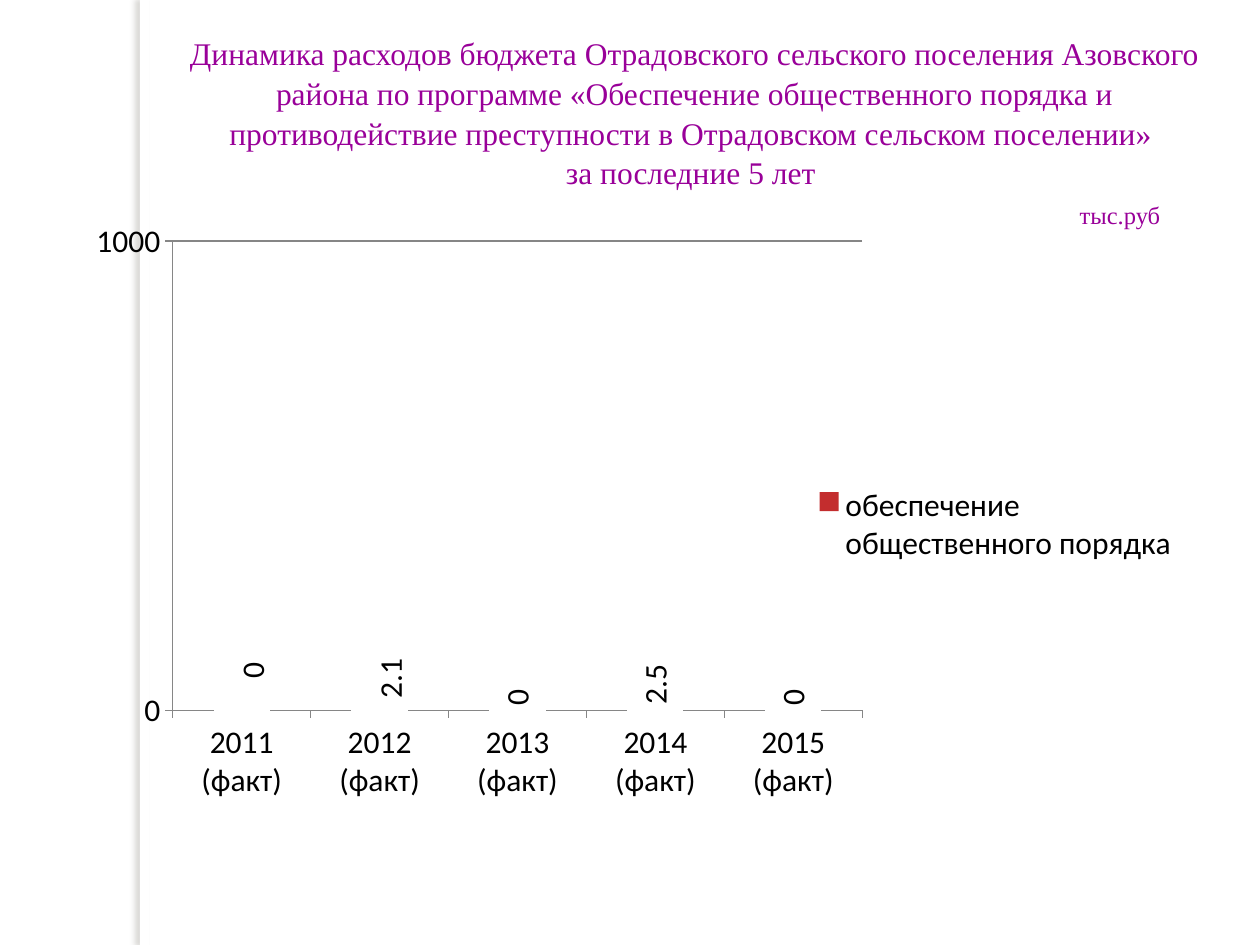
from lxml.etree import SubElement
from pptx import Presentation
from pptx.chart.data import CategoryChartData
from pptx.dml.color import RGBColor
from pptx.enum.chart import XL_CHART_TYPE, XL_LABEL_POSITION, XL_LEGEND_POSITION, XL_TICK_MARK
from pptx.enum.shapes import MSO_SHAPE
from pptx.enum.text import PP_ALIGN
from pptx.oxml import parse_xml
from pptx.oxml.ns import nsdecls, qn
from pptx.util import Cm, Pt

THEME = {
    "white": RGBColor.from_string("FFFFFF"),
    "heading": RGBColor.from_string("990099"),
    "text": RGBColor.from_string("000000"),
    "series": RGBColor.from_string("C32D2E"),
    "axis": RGBColor.from_string("868686"),
    "shadow": "736F63",
    "heading_font": "Times New Roman",
    "chart_font": "Calibri",
    "body_size": Pt(18),
    "unit_size": Pt(14),
}

HEADING = [
    ("Динамика расходов бюджета Отрадовского сельского поселения Азовского района "
     "по программе «Обеспечение общественного порядка и противодействие "
     "преступности в Отрадовском сельском поселении» ",
     "body_size", {"alignment": PP_ALIGN.CENTER, "line_spacing": 1.05}),
    ("за последние 5 лет ",
     "body_size", {"alignment": PP_ALIGN.CENTER, "line_spacing": 1.05}),
    ("тыс.руб",
     "unit_size", {"alignment": PP_ALIGN.RIGHT, "space_before": Pt(5)}),
]
UNIT_MARGIN = Cm(1.07)

SERIES_NAME = "обеспечение общественного порядка"
SPENDING = {2011: 0, 2012: 2.1, 2013: 0, 2014: 2.5, 2015: 0}
LABEL_SHIFTS = {0: (0.01, -0.045), 1: (0.01, -0.01)}
PLOT_AREA = {"x": 0.088, "y": 0.036, "w": 0.617, "h": 0.77}


def set_attrs(obj, values):
    for name, value in values.items():
        setattr(obj, name, value)


def manual_layout(modes, fractions):
    layout = parse_xml(f"<c:layout {nsdecls('c')}><c:manualLayout/></c:layout>")
    for tag, value in (modes | fractions).items():
        SubElement(layout[0], qn(f"c:{tag}")).set("val", str(value))
    return layout


def add_side_strip(slide):
    sp = slide.shapes.add_shape(MSO_SHAPE.RECTANGLE, Cm(2.82), 0, Cm(0.2), Cm(19.05))
    sp.fill.solid()
    sp.fill.fore_color.rgb = THEME["white"]
    sp.line.fill.background()
    sp._element.spPr.append(parse_xml(
        f'<a:effectLst {nsdecls("a")}><a:outerShdw blurRad="{Pt(3)}" dist="{Pt(3)}" '
        f'dir="10800000" algn="tl" rotWithShape="0"><a:srgbClr val="{THEME["shadow"]}">'
        '<a:alpha val="25000"/></a:srgbClr></a:outerShdw></a:effectLst>'))


def add_heading(slide):
    tf = slide.shapes.add_textbox(Cm(3.3), Cm(0.53), Cm(21.41), Cm(4.19)).text_frame
    tf.word_wrap = True
    for i, (text, size, layout) in enumerate(HEADING):
        p = tf.add_paragraph() if i else tf.paragraphs[0]
        set_attrs(p, layout)
        r = p.add_run()
        r.text = text
        set_attrs(r.font, {"name": THEME["heading_font"], "size": THEME[size]})
        r.font.color.rgb = THEME["heading"]
    p._p.get_or_add_pPr().set("marR", str(UNIT_MARGIN))


def add_labels(plot, series):
    plot.has_data_labels = True
    set_attrs(plot.data_labels, {"show_value": True, "position": XL_LABEL_POSITION.OUTSIDE_END})
    labels = series.data_labels
    set_attrs(labels, {"show_value": True, "position": XL_LABEL_POSITION.OUTSIDE_END})
    labels.font.size = THEME["body_size"]
    labels._element.find(qn("c:txPr")).find(qn("a:bodyPr")).set("rot", "-5400000")
    for i, (x, y) in LABEL_SHIFTS.items():
        label = series.points[i].data_label
        label.font.size = THEME["body_size"]
        label.position = XL_LABEL_POSITION.OUTSIDE_END
        d_lbl = labels._element.findall(qn("c:dLbl"))[i]
        d_lbl.find(qn("c:txPr")).find(qn("a:bodyPr")).set("rot", "-5400000")
        d_lbl.insert(1, manual_layout({}, {"x": x, "y": y}))


def add_spending_chart(slide):
    data = CategoryChartData(number_format="General")
    data.categories = [f"{year} (факт)" for year in SPENDING]
    data.add_series(SERIES_NAME, SPENDING.values())
    chart = slide.shapes.add_chart(
        XL_CHART_TYPE.COLUMN_CLUSTERED, Cm(1.5), Cm(4.42), Cm(22.53), Cm(12.29), data).chart
    set_attrs(chart, {"has_title": False, "has_legend": True})
    set_attrs(chart.font, {"name": THEME["chart_font"], "size": THEME["body_size"]})
    chart.font.color.rgb = THEME["text"]
    set_attrs(chart.legend, {"position": XL_LEGEND_POSITION.RIGHT, "include_in_layout": False})

    set_attrs(chart.value_axis, {"minimum_scale": 0, "maximum_scale": 1000,
                                 "major_unit": 1000, "has_major_gridlines": True})
    lines = [chart.value_axis.major_gridlines.format.line]
    for axis in (chart.category_axis, chart.value_axis):
        axis.major_tick_mark = XL_TICK_MARK.OUTSIDE
        lines.append(axis.format.line)
    for line in lines:
        line.color.rgb = THEME["axis"]
        line.width = Pt(0.75)

    plot = chart.plots[0]
    set_attrs(plot, {"vary_by_categories": False, "gap_width": 150})
    series = plot.series[0]
    series.invert_if_negative = False
    series.format.fill.solid()
    series.format.fill.fore_color.rgb = THEME["series"]
    for i in range(len(SPENDING)):
        fmt = series.points[i].format
        fmt.fill.solid()
        fmt.fill.fore_color.rgb = THEME["white"]
        fmt.line.color.rgb = THEME["white"]
    add_labels(plot, series)

    area = chart._chartSpace.chart.plotArea
    for old in area.findall(qn("c:layout")):
        area.remove(old)
    area.insert(0, manual_layout(
        {"layoutTarget": "inner", "xMode": "edge", "yMode": "edge"}, PLOT_AREA))


def main():
    prs = Presentation()
    set_attrs(prs, {"slide_width": Cm(25.4), "slide_height": Cm(19.05)})
    slide = prs.slides.add_slide(prs.slide_layouts[6])
    add_side_strip(slide)
    add_heading(slide)
    add_spending_chart(slide)
    prs.save("out.pptx")


if __name__ == "__main__":
    main()
